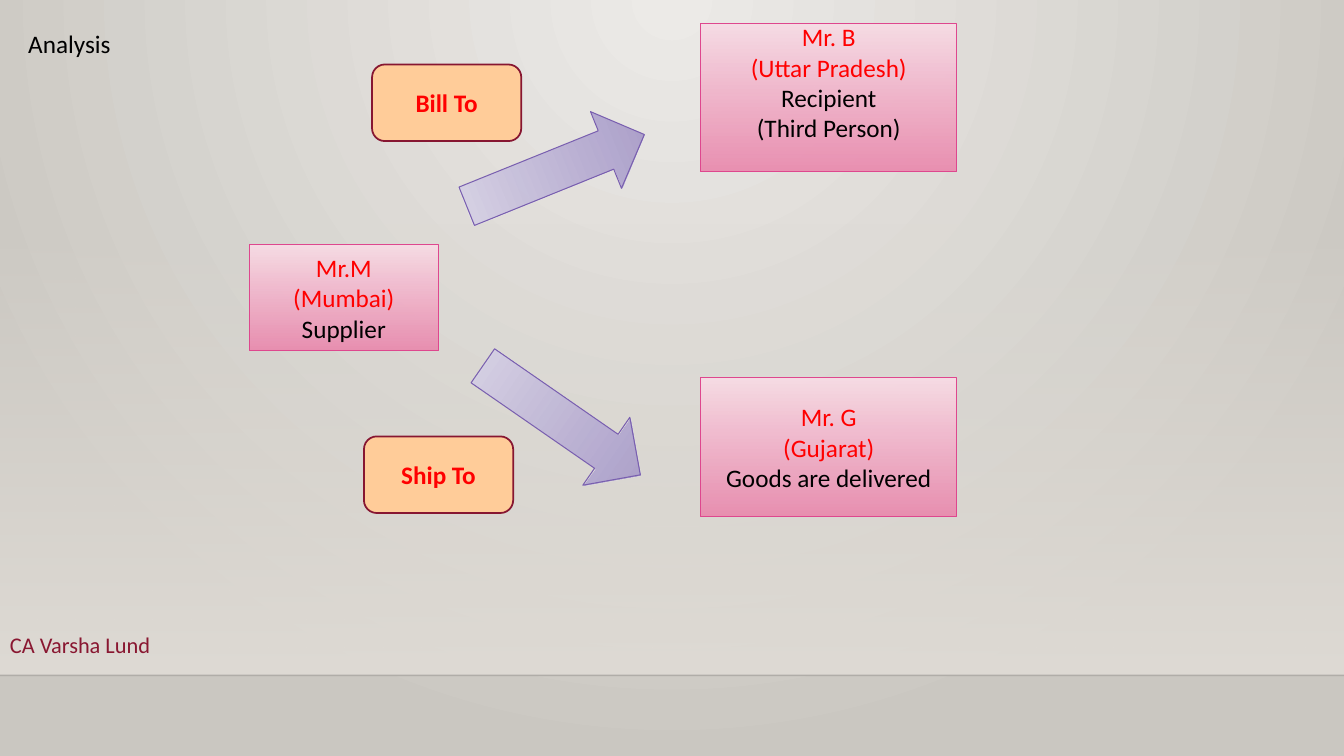
from lxml import etree
from pptx import Presentation
from pptx.dml.color import RGBColor
from pptx.enum import shapes, text
from pptx.oxml.ns import qn
from pptx.util import Inches, Pt

BLACK = RGBColor(0x00, 0x00, 0x00)
RED = RGBColor(0xFF, 0x00, 0x00)
MAROON = RGBColor(0x89, 0x17, 0x31)
LABEL_LINE = RGBColor(0x87, 0x16, 0x31)
PEACH = RGBColor(0xFF, 0xCC, 0x99)
PINK_LINE = RGBColor(0xDE, 0x47, 0x8E)
PINK = (RGBColor(0xF7, 0xDC, 0xE5), RGBColor(0xEA, 0x8A, 0xAE))
PURPLE_LINE = RGBColor(0x79, 0x5F, 0xAF)
PURPLE = (RGBColor(0xDC, 0xD8, 0xE8), RGBColor(0xA3, 0x95, 0xC6))
BACKDROP = (RGBColor(0xEC, 0xEA, 0xE7), RGBColor(0xCA, 0xC7, 0xC1))
HAZE = RGBColor(0xDF, 0xDB, 0xD5)

TITLE = "Analysis"
AUTHOR = "CA Varsha Lund"
PARTIES = [
    ((2.47, 2.43, 1.88, 1.05), ["Mr.M", "(Mumbai)"], ["Supplier"], 0.05),
    ((6.95, 3.75, 2.54, 1.37), ["Mr. G", "(Gujarat)"], ["Goods are delivered"], 0.05),
    ((6.95, 0.23, 2.54, 1.47), ["Mr. B", "(Uttar Pradesh)"],
     ["Recipient", "(Third Person)"], 0.35),
]
ARROWS = [((5.1, 0.74), 248), ((5.16, 3.22), 304.7)]
ARROW_SIZE = (0.82, 1.9)
LABELS = [((3.69, 0.64), "Bill To"), ((3.61, 4.33), "Ship To")]
LABEL_SIZE = (1.48, 0.76)
FLOOR_TOP = 6.7


def set_alpha(color_element, percent):
    alpha = etree.SubElement(color_element, qn("a:alpha"))
    alpha.set("val", str(percent * 1000))


def set_gradient(fill, colors, opacities=(100, 100)):
    fill.gradient()
    fill.gradient_angle = 270
    for stop, color in zip(fill.gradient_stops, colors):
        stop.color.rgb = color


def fade_gradient(shape, opacities):
    stops = shape.element.spPr.iter(qn("a:gs"))
    for stop, opacity in zip(stops, opacities):
        if opacity < 100:
            set_alpha(stop[0], opacity)


def add_panel(slide, kind, box, fill, line=None, width=0.75, opacities=(100, 92)):
    shape = slide.shapes.add_shape(kind, *map(Inches, box))
    shape.shadow.inherit = False
    if isinstance(fill, RGBColor):
        shape.fill.solid()
        shape.fill.fore_color.rgb = fill
    else:
        set_gradient(shape.fill, fill)
        fade_gradient(shape, opacities)
    if line is None:
        shape.line.fill.background()
    else:
        shape.line.color.rgb = line
        shape.line.width = Pt(width)
    return shape


def write(frame, lines, colors, size=18, bold=False, align=text.PP_ALIGN.CENTER,
          anchor=text.MSO_ANCHOR.MIDDLE, bottom=0.05):
    frame.word_wrap = True
    frame.vertical_anchor = anchor
    frame.margin_left = frame.margin_right = Inches(0.1)
    frame.margin_top = Inches(0.05)
    frame.margin_bottom = Inches(bottom)
    for index, (line, color) in enumerate(zip(lines, colors)):
        paragraph = frame.paragraphs[0] if index == 0 else frame.add_paragraph()
        paragraph.alignment = align
        run = paragraph.add_run()
        run.text = line
        run.font.name = "Calibri"
        run.font.size = Pt(size)
        run.font.bold = bold
        run.font.color.rgb = color


def paint_background(slide):
    set_gradient(slide.background.fill, BACKDROP)
    gradient = next(slide.element.iter(qn("a:gradFill")))
    gradient.remove(gradient.find(qn("a:lin")))
    circle = etree.SubElement(gradient, qn("a:path"), {"path": "circle"})
    etree.SubElement(circle, qn("a:fillToRect"),
                     {"l": "43000", "t": "0", "r": "43000", "b": "100000"})


def add_floor(slide):
    add_panel(slide, shapes.MSO_SHAPE.RECTANGLE, (0, 2.21, 13.33, 4.49),
              (HAZE, HAZE), opacities=(0, 100))
    edge = slide.shapes.add_connector(
        shapes.MSO_CONNECTOR.STRAIGHT, 0, Inches(FLOOR_TOP),
        Inches(13.33), Inches(FLOOR_TOP))
    edge.line.color.rgb = BLACK
    edge.line.width = Pt(1)
    properties = edge.element.spPr
    set_alpha(next(properties.iter(qn("a:srgbClr"))), 20)
    etree.SubElement(properties, qn("a:effectLst"))


def main():
    presentation = Presentation()
    presentation.slide_width = Inches(13.33)
    presentation.slide_height = Inches(7.5)
    slide = presentation.slides.add_slide(presentation.slide_layouts[5])
    paint_background(slide)
    add_floor(slide)

    for box, names, roles, bottom in PARTIES:
        party = add_panel(slide, shapes.MSO_SHAPE.RECTANGLE, box, PINK, PINK_LINE)
        colors = [RED] * len(names) + [BLACK] * len(roles)
        write(party.text_frame, names + roles, colors, bottom=bottom)

    for corner, rotation in ARROWS:
        arrow = add_panel(slide, shapes.MSO_SHAPE.DOWN_ARROW, corner + ARROW_SIZE,
                          PURPLE, PURPLE_LINE)
        arrow.rotation = rotation

    for corner, label in LABELS:
        tag = add_panel(slide, shapes.MSO_SHAPE.ROUNDED_RECTANGLE,
                        corner + LABEL_SIZE, PEACH, LABEL_LINE, 1.25)
        write(tag.text_frame, [label], [RED], bold=True)

    title = slide.shapes.title
    title.left, title.top, title.width, title.height = map(
        Inches, (0.18, 0.23, 2.92, 0.4))
    write(title.text_frame, [TITLE], [BLACK], align=text.PP_ALIGN.LEFT,
          anchor=text.MSO_ANCHOR.TOP)

    author = slide.shapes.add_textbox(*map(Inches, (0, 6.21, 3.58, 0.37)))
    write(author.text_frame, [AUTHOR], [MAROON], size=16,
          align=text.PP_ALIGN.LEFT, anchor=text.MSO_ANCHOR.TOP)

    presentation.save("out.pptx")


if __name__ == "__main__":
    main()
